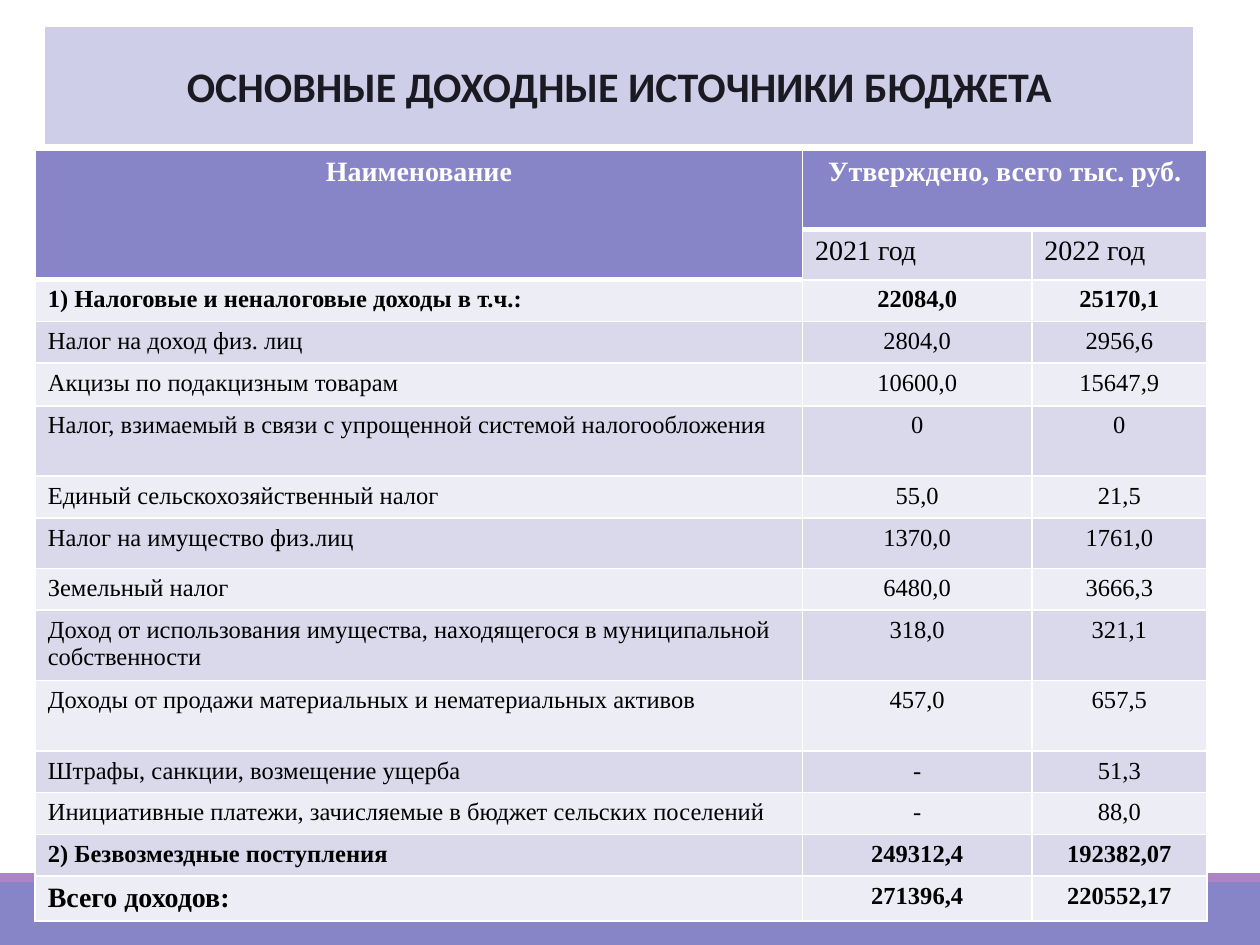
from lxml import etree
from pptx import Presentation
from pptx.dml.color import RGBColor
from pptx.enum.shapes import MSO_SHAPE
from pptx.enum.text import MSO_ANCHOR, PP_ALIGN
from pptx.oxml.ns import qn
from pptx.util import Cm, Pt

RECTANGLE = MSO_SHAPE.RECTANGLE
LEFT, CENTER = PP_ALIGN.LEFT, PP_ALIGN.CENTER
TOP, MIDDLE = MSO_ANCHOR.TOP, MSO_ANCHOR.MIDDLE

COLORS = {
    "violet": "8784C7",
    "orchid": "AD84C6",
    "title_fill": "CFCEE9",
    "title_text": "1B1A22",
    "dark_band": "D9D9EB",
    "light_band": "EDEDF5",
    "white": "FFFFFF",
    "black": "000000",
}

INCOME = [
    ("1) Налоговые и неналоговые доходы в т.ч.:", "22084,0", "25170,1"),
    ("Налог на доход физ. лиц", "2804,0", "2956,6"),
    ("Акцизы по подакцизным товарам", "10600,0", "15647,9"),
    ("Налог, взимаемый в связи с упрощенной системой налогообложения", "0", "0"),
    ("Единый сельскохозяйственный налог", "55,0", "21,5"),
    ("Налог на имущество физ.лиц", "1370,0", "1761,0"),
    ("Земельный налог", "6480,0", "3666,3"),
    ("Доход от использования имущества, находящегося в муниципальной собственности",
     "318,0", "321,1"),
    ("Доходы от продажи материальных и нематериальных активов", "457,0", "657,5"),
    ("Штрафы, санкции, возмещение ущерба", "-", "51,3"),
    ("Инициативные платежи, зачисляемые в бюджет сельских поселений", "-", "88,0"),
    ("2) Безвозмездные поступления", "249312,4", "192382,07"),
    ("Всего доходов:", "271396,4", "220552,17"),
]
HEADER_ROWS = 2
BOLD_ROWS = {0, len(INCOME) - 2, len(INCOME) - 1}
COLUMN_WIDTHS = [15.47, 4.62, 3.53]
ROW_HEIGHT = 0.84
SPECIAL_HEIGHTS = {0: 1.6, 1: 1.02, 4: 0.86, 5: 1.42, 7: 1.02, 9: 1.42, 10: 1.42, 14: 0.91}


def rgb(name):
    return RGBColor.from_string(COLORS[name])


def write(frame, text, font="Times New Roman", size=14, color="black", bold=False,
          align=LEFT):
    paragraph = frame.paragraphs[0]
    paragraph.alignment = align
    run = paragraph.add_run()
    run.text = text
    run.font.name = font
    run.font.size = Pt(size)
    run.font.bold = bold
    run.font.color.rgb = rgb(color)


class BudgetSlide:
    def __init__(self, presentation):
        self.slide = presentation.slides.add_slide(presentation.slide_layouts[5])

    def title(self, text, left, top, width, height):
        heading = self.slide.shapes.title
        heading.left, heading.top = Cm(left), Cm(top)
        heading.width, heading.height = Cm(width), Cm(height)
        outline = etree.SubElement(heading.element.spPr, qn("a:prstGeom"), prst="roundRect")
        etree.SubElement(outline, qn("a:avLst"))
        heading.fill.solid()
        heading.fill.fore_color.rgb = rgb("title_fill")
        heading.line.color.rgb = rgb("white")
        heading.line.width = Pt(1.25)
        heading.text_frame.vertical_anchor = MIDDLE
        write(heading.text_frame, text, font="Calibri", size=24, color="title_text",
              bold=True, align=CENTER)

    def band(self, left, top, width, height, color):
        strip = self.slide.shapes.add_shape(RECTANGLE, Cm(left), Cm(top), Cm(width), Cm(height))
        strip.shadow.inherit = False
        strip.fill.solid()
        strip.fill.fore_color.rgb = rgb(color)
        strip.line.fill.background()

    def table(self, left, top, widths, heights):
        table = self.slide.shapes.add_table(
            len(heights), len(widths), Cm(left), Cm(top), Cm(sum(widths)), Cm(sum(heights))
        ).table
        table.first_row = table.horz_banding = False
        for column, width in zip(table.columns, widths):
            column.width = Cm(width)
        for row, height in zip(table.rows, heights):
            row.height = Cm(height)
        return table

    def cell(self, cell, text, fill, bottom=1, **style):
        write(cell.text_frame, text, **style)
        cell.vertical_anchor = TOP
        cell.fill.solid()
        cell.fill.fore_color.rgb = rgb(fill)
        properties = cell._tc.get_or_add_tcPr()
        for index, (side, width) in enumerate(zip("LRTB", (1, 1, 1, bottom))):
            border = etree.Element(qn(f"a:ln{side}"), w=str(Pt(width)))
            paint = etree.SubElement(border, qn("a:solidFill"))
            etree.SubElement(paint, qn("a:srgbClr"), val=COLORS["white"])
            properties.insert(index, border)


def main():
    presentation = Presentation()
    presentation.slide_width, presentation.slide_height = Cm(25.4), Cm(19.05)
    page = BudgetSlide(presentation)
    page.title("ОСНОВНЫЕ ДОХОДНЫЕ ИСТОЧНИКИ БЮДЖЕТА", 0.89, 0.53, 23.19, 2.39)
    page.band(0, 17.78, 25.4, 1.27, "violet")
    page.band(0, 17.6, 25.4, 0.18, "orchid")

    heights = [SPECIAL_HEIGHTS.get(row, ROW_HEIGHT)
               for row in range(HEADER_ROWS + len(INCOME))]
    budget = page.table(0.71, 3.02, COLUMN_WIDTHS, heights)
    budget.cell(0, 0).merge(budget.cell(1, 0))
    budget.cell(0, 1).merge(budget.cell(0, 2))
    for column, heading in enumerate(("Наименование", "Утверждено, всего тыс. руб.")):
        page.cell(budget.cell(0, column), heading, "violet", bottom=3, size=16,
                  color="white", bold=True, align=CENTER)
    for column, year in enumerate(("2021 год", "2022 год"), start=1):
        page.cell(budget.cell(1, column), year, "dark_band", size=16)

    for index, source in enumerate(INCOME):
        fill = "dark_band" if index % 2 else "light_band"
        for column, text in enumerate(source):
            is_total_label = index == len(INCOME) - 1 and column == 0
            page.cell(budget.cell(HEADER_ROWS + index, column), text, fill,
                      size=16 if is_total_label else 14,
                      bold=index in BOLD_ROWS,
                      align=CENTER if column else LEFT)
    presentation.save("out.pptx")


if __name__ == "__main__":
    main()
